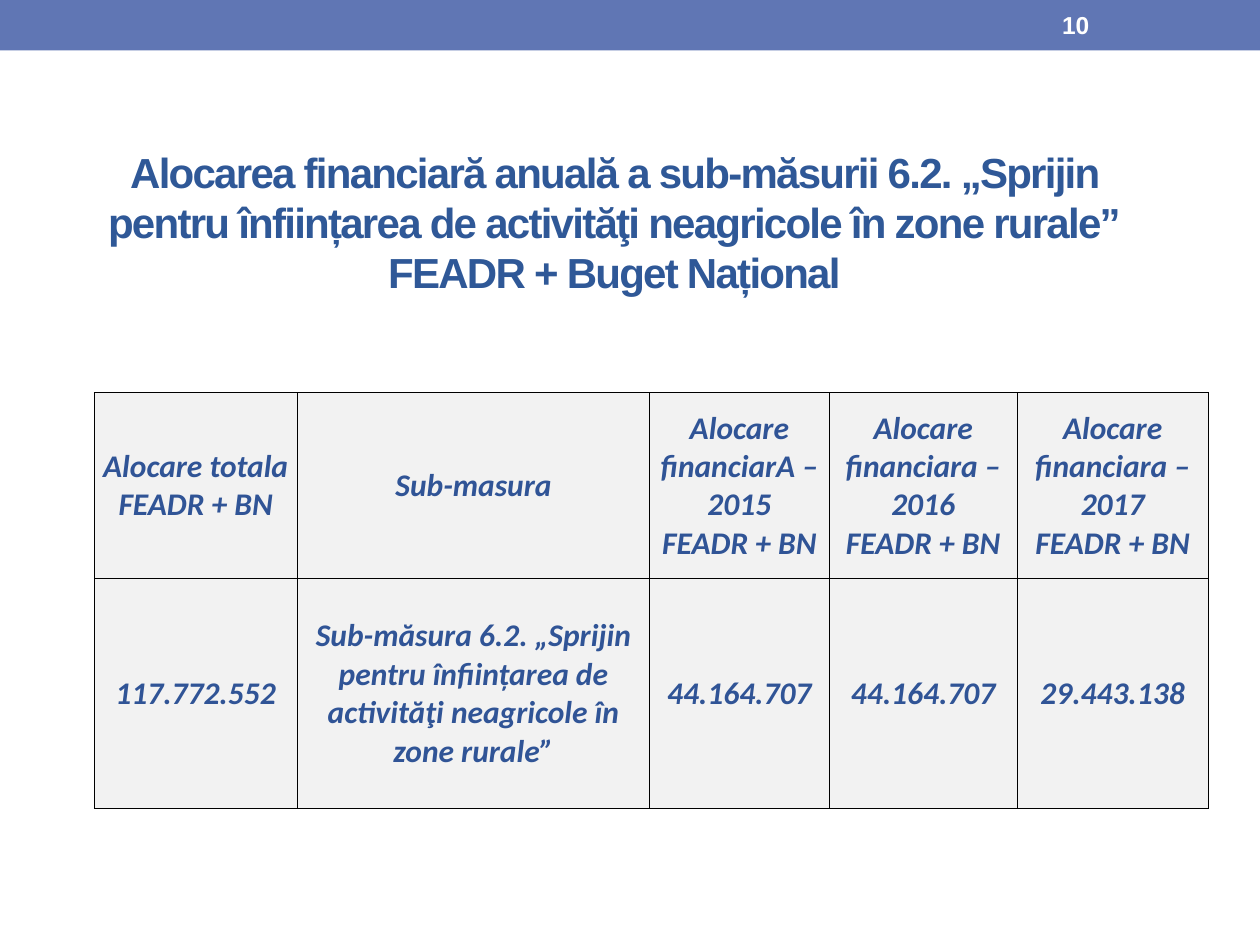
from dataclasses import dataclass

from lxml import etree
from pptx import Presentation
from pptx.dml.color import RGBColor
from pptx.enum import shapes, text
from pptx.oxml import ns
from pptx.util import Cm, Pt


@dataclass(frozen=True)
class Theme:
    band: str = "6076B4"
    title: str = "2F5897"
    table_text: str = "305496"
    cell: str = "F2F2F2"
    border: str = "000000"
    number: str = "FFFFFF"
    title_size: int = 24
    table_size: int = 18
    number_size: int = 14


def format_text(text_frame, font_name, size, color, align, italic=None):
    for paragraph in text_frame.paragraphs:
        paragraph.alignment = align
        for run in paragraph.runs:
            run.font.name = font_name
            run.font.size = Pt(size)
            run.font.bold = True
            run.font.italic = italic
            run.font.color.rgb = RGBColor.from_string(color)


def add_borders(cell, color, width):
    properties = cell._tc.get_or_add_tcPr()
    for position, side in enumerate(("lnL", "lnR", "lnT", "lnB")):
        line = etree.Element(ns.qn(f"a:{side}"), w=str(Pt(width)))
        fill = etree.SubElement(line, ns.qn("a:solidFill"))
        etree.SubElement(fill, ns.qn("a:srgbClr"), val=color)
        properties.insert(position, line)


theme = Theme()
center = text.PP_ALIGN.CENTER
presentation = Presentation()
presentation.slide_width = Cm(25.4)
presentation.slide_height = Cm(19.05)
slide = presentation.slides.add_slide(presentation.slide_layouts[5])

# Top band
band = slide.shapes.add_shape(
    shapes.MSO_SHAPE.RECTANGLE, 0, 0, presentation.slide_width, Cm(1.02)
)
band.shadow.inherit = False
band.fill.solid()
band.fill.fore_color.rgb = RGBColor.from_string(theme.band)
band.line.fill.background()

# Title
title = slide.shapes.title
title.left, title.top, title.width, title.height = Cm(1.27), Cm(2.21), Cm(22.23), Cm(3.91)
title.text_frame.text = (
    "Alocarea financiară anuală a sub-măsurii 6.2. „Sprijin pentru înființarea "
    "de activităţi neagricole în zone rurale”\vFEADR + Buget Național"
)
title.text_frame.word_wrap = True
title.text_frame.auto_size = text.MSO_AUTO_SIZE.NONE
title.text_frame.vertical_anchor = text.MSO_ANCHOR.BOTTOM
format_text(title.text_frame, "Arial", theme.title_size, theme.title, center)
for run in title.text_frame.paragraphs[0].runs:
    run.font._element.set("spc", "-100")

# Allocation table
rows = [
    [
        "Alocare totala\nFEADR + BN",
        "Sub-masura",
        "Alocare financiarA – 2015\nFEADR + BN",
        "Alocare financiara – 2016\nFEADR + BN",
        "Alocare financiara – 2017\nFEADR + BN",
    ],
    [
        "117.772.552",
        "Sub-măsura 6.2. „Sprijin pentru înființarea de activităţi neagricole în zone rurale”",
        "44.164.707",
        "44.164.707",
        "29.443.138",
    ],
]
column_widths = [4.09, 7.11, 3.61, 3.8, 3.84]
row_heights = [3.73, 4.65]
table = slide.shapes.add_table(
    len(rows), len(column_widths), Cm(1.9), Cm(7.92),
    Cm(sum(column_widths)), Cm(sum(row_heights)),
).table
for column, width in zip(table.columns, column_widths):
    column.width = Cm(width)
for row, height, values in zip(table.rows, row_heights, rows):
    row.height = Cm(height)
    for cell, value in zip(row.cells, values):
        cell.text_frame.text = value
        cell.vertical_anchor = text.MSO_ANCHOR.MIDDLE
        cell.margin_left = cell.margin_right = cell.margin_top = Cm(0.02)
        cell.margin_bottom = 0
        cell.fill.solid()
        cell.fill.fore_color.rgb = RGBColor.from_string(theme.cell)
        add_borders(cell, theme.border, 0.5)
        format_text(
            cell.text_frame, "Calibri", theme.table_size, theme.table_text, center, italic=True
        )

# Slide number
number = slide.shapes.add_textbox(Cm(21.16), Cm(0.05), Cm(2.97), Cm(0.91))
number.text_frame.text = "10"
number.text_frame.word_wrap = True
number.text_frame.vertical_anchor = text.MSO_ANCHOR.MIDDLE
format_text(
    number.text_frame, "Arial", theme.number_size, theme.number, text.PP_ALIGN.LEFT
)

presentation.save("out.pptx")
